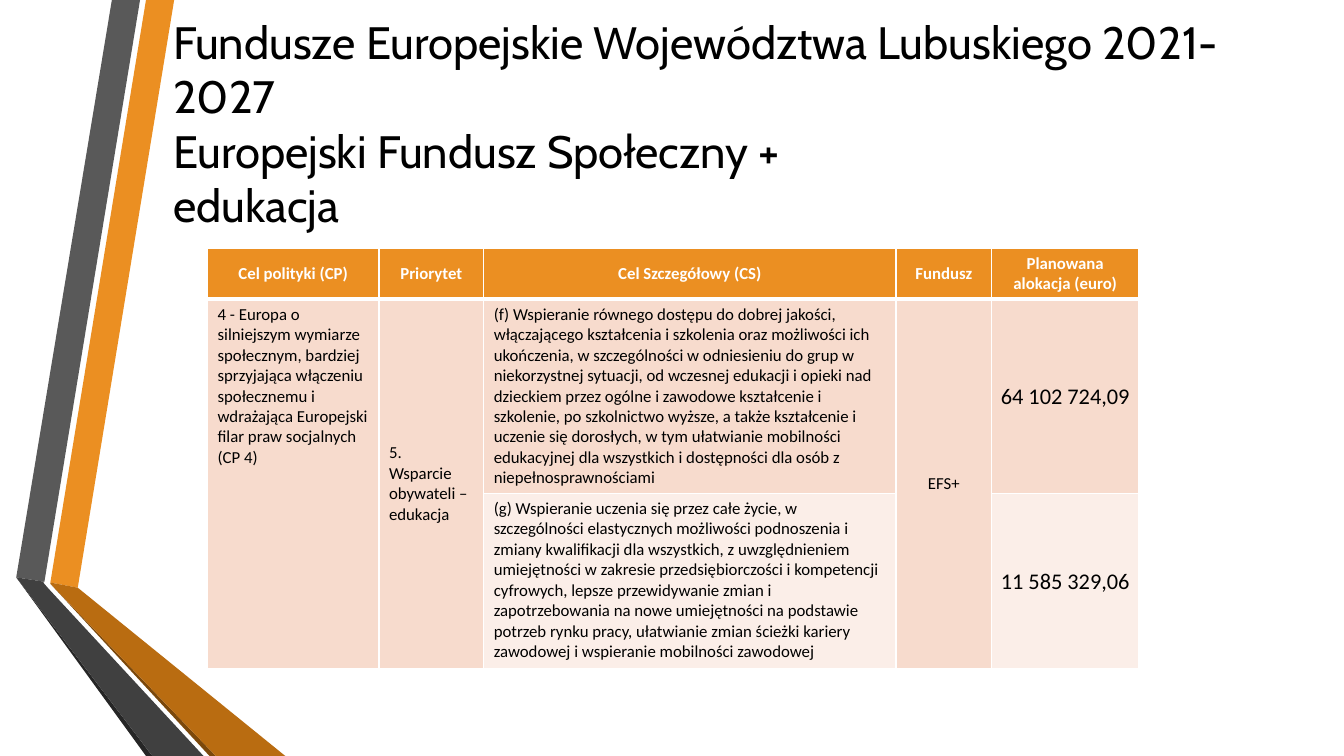
from dataclasses import dataclass

from lxml import etree
from pptx import Presentation
from pptx import util as u
from pptx.dml import color
from pptx.enum import text
from pptx.oxml import ns

ORANGE = "EB8F22"
BLACK = "000000"
WHITE = "FFFFFF"
PEACH = "F7DBCD"
PALE_PEACH = "FBEEE8"
LEFT, CENTER = text.PP_ALIGN.LEFT, text.PP_ALIGN.CENTER
TOP, MIDDLE = text.MSO_ANCHOR.TOP, text.MSO_ANCHOR.MIDDLE


@dataclass
class Ribbon:
    fill: str
    points: list[tuple[float, float]]


@dataclass
class CellText:
    content: str
    align: text.PP_ALIGN = LEFT
    anchor: text.MSO_ANCHOR = TOP
    size: float = 12
    amount: bool = False


RIBBONS = [
    Ribbon(ORANGE, [(1.27, 14.68), (1.96, 14.81), (4.39, 0), (3.68, 0)]),
    Ribbon("595959", [(3.53, 0), (2.82, 0), (0.41, 14.55), (1.12, 14.66)]),
    Ribbon("262626", [(0.41, 14.55), (3.68, 19.05), (3.84, 19.05)]),
    Ribbon("7B480B", [(1.27, 14.71), (5.28, 19.05), (5.44, 19.05)]),
    Ribbon("B96C11", [(1.27, 14.71), (5.44, 19.05), (7.19, 19.05), (1.96, 14.81), (1.27, 14.68)]),
    Ribbon("404040", [(5.13, 19.05), (1.22, 14.83), (1.09, 14.68), (1.12, 14.66),
                      (0.41, 14.55), (3.84, 19.05)]),
]

TITLE = """Fundusze Europejskie Województwa Lubuskiego 2021-2027
Europejski Fundusz Społeczny +
edukacja"""

COLUMN_WIDTHS = [4.32, 2.64, 10.39, 2.41, 3.71]
ROW_HEIGHTS = [1.26, 4.88, 4.4]
ROW_FILLS = [ORANGE, PEACH, PALE_PEACH]
MERGED_COLUMNS = [0, 1, 3]
HEADERS = ["Cel polityki (CP)", "Priorytet", "Cel Szczegółowy (CS)", "Fundusz",
           "Planowana alokacja (euro)"]
ROWS = [
    [CellText(header, CENTER, MIDDLE) for header in HEADERS],
    [
        CellText("4 - Europa o silniejszym wymiarze społecznym, bardziej sprzyjająca włączeniu "
                 "społecznemu i wdrażająca Europejski filar praw socjalnych\n(CP 4)"),
        CellText("5.\nWsparcie obywateli – edukacja", anchor=MIDDLE),
        CellText("(f) Wspieranie równego dostępu do dobrej jakości, włączającego kształcenia i "
                 "szkolenia oraz możliwości ich ukończenia, w szczególności w odniesieniu do grup "
                 "w niekorzystnej sytuacji, od wczesnej edukacji i opieki nad dzieckiem przez "
                 "ogólne i zawodowe kształcenie i szkolenie, po szkolnictwo wyższe, a także "
                 "kształcenie i uczenie się dorosłych, w tym ułatwianie mobilności edukacyjnej "
                 "dla wszystkich i dostępności dla osób z niepełnosprawnościami"),
        CellText("EFS+", CENTER, MIDDLE),
        CellText("64 102 724,09", CENTER, MIDDLE, 16, True),
    ],
    [
        None,
        None,
        CellText("(g) Wspieranie uczenia się przez całe życie, w szczególności elastycznych "
                 "możliwości podnoszenia i zmiany kwalifikacji dla wszystkich, z uwzględnieniem "
                 "umiejętności w zakresie przedsiębiorczości i kompetencji cyfrowych, lepsze "
                 "przewidywanie zmian i zapotrzebowania na nowe umiejętności na podstawie potrzeb "
                 "rynku pracy, ułatwianie zmian ścieżki kariery zawodowej i wspieranie mobilności "
                 "zawodowej"),
        None,
        CellText("11 585 329,06", CENTER, MIDDLE, 16, True),
    ],
]


def rgb(value: str) -> color.RGBColor:
    return color.RGBColor.from_string(value)


def format_text(frame, font: str, size: float, fill: str, align, bold: bool = False,
                spacing: float = 1.0) -> None:
    for paragraph in frame.paragraphs:
        paragraph.alignment = align
        paragraph.line_spacing = spacing
        for run in paragraph.runs:
            run.font.name = font
            run.font.size = u.Pt(size)
            run.font.bold = bold
            run.font.color.rgb = rgb(fill)


def draw_ribbon(slide, ribbon: Ribbon) -> None:
    start, *rest = [(u.Cm(x), u.Cm(y)) for x, y in ribbon.points]
    builder = slide.shapes.build_freeform(*start)
    builder.add_line_segments(rest, close=True)
    shape = builder.convert_to_shape()
    shape.shadow.inherit = False
    shape.fill.solid()
    shape.fill.fore_color.rgb = rgb(ribbon.fill)
    shape.line.fill.background()


def write_title(slide) -> None:
    title = slide.shapes.title
    title.left, title.top, title.width, title.height = u.Cm(4.11), u.Cm(0), u.Cm(28.9), u.Cm(6.2)
    frame = title.text_frame
    frame.text = TITLE
    frame.word_wrap = True
    frame.auto_size = text.MSO_AUTO_SIZE.NONE
    frame.vertical_anchor = MIDDLE
    format_text(frame, "Cabin", 32.4, BLACK, LEFT)
    title.element.getparent().append(title.element)


def add_border(cell, side: str, width: float) -> None:
    properties = cell._tc.get_or_add_tcPr()
    line = etree.SubElement(properties, ns.qn(f"a:ln{side}"), w=str(u.Pt(width)))
    fill = etree.SubElement(line, ns.qn("a:solidFill"))
    etree.SubElement(fill, ns.qn("a:srgbClr"), val=WHITE)


def format_cell(cell, row: int, fill: str) -> None:
    add_border(cell, "L", 1)
    add_border(cell, "R", 1)
    add_border(cell, "T", 3 if row == 1 else 1)
    add_border(cell, "B", 3 if row == 0 else 1)
    cell.fill.solid()
    cell.fill.fore_color.rgb = rgb(fill)


def write_cell(cell, entry: CellText, header: bool) -> None:
    cell.text_frame.text = entry.content
    cell.vertical_anchor = entry.anchor
    if entry.amount:
        cell.margin_left = cell.margin_right = u.Cm(0.13)
        cell.margin_top = cell.margin_bottom = u.Cm(0)
    format_text(cell.text_frame, "Calibri", entry.size, WHITE if header else BLACK,
                entry.align, header, 1.07 if entry.amount else 1.0)


def draw_table(slide) -> None:
    frame = slide.shapes.add_table(len(ROWS), len(COLUMN_WIDTHS), u.Cm(5.23), u.Cm(6.25),
                                   u.Cm(sum(COLUMN_WIDTHS)), u.Cm(sum(ROW_HEIGHTS)))
    table = frame.table
    for column, width in zip(table.columns, COLUMN_WIDTHS):
        column.width = u.Cm(width)
    for row, height in zip(table.rows, ROW_HEIGHTS):
        row.height = u.Cm(height)
    for column in MERGED_COLUMNS:
        table.cell(1, column).merge(table.cell(2, column))
    for row, entries in enumerate(ROWS):
        for column, entry in enumerate(entries):
            cell = table.cell(row, column)
            format_cell(cell, row, ROW_FILLS[row] if entry else PEACH)
            if entry:
                write_cell(cell, entry, row == 0)


def main() -> None:
    presentation = Presentation()
    presentation.slide_width = u.Cm(33.87)
    presentation.slide_height = u.Cm(19.05)
    slide = presentation.slides.add_slide(presentation.slide_layouts.get_by_name("Title Only"))
    for ribbon in RIBBONS:
        draw_ribbon(slide, ribbon)
    write_title(slide)
    draw_table(slide)
    presentation.save("out.pptx")


if __name__ == "__main__":
    main()
